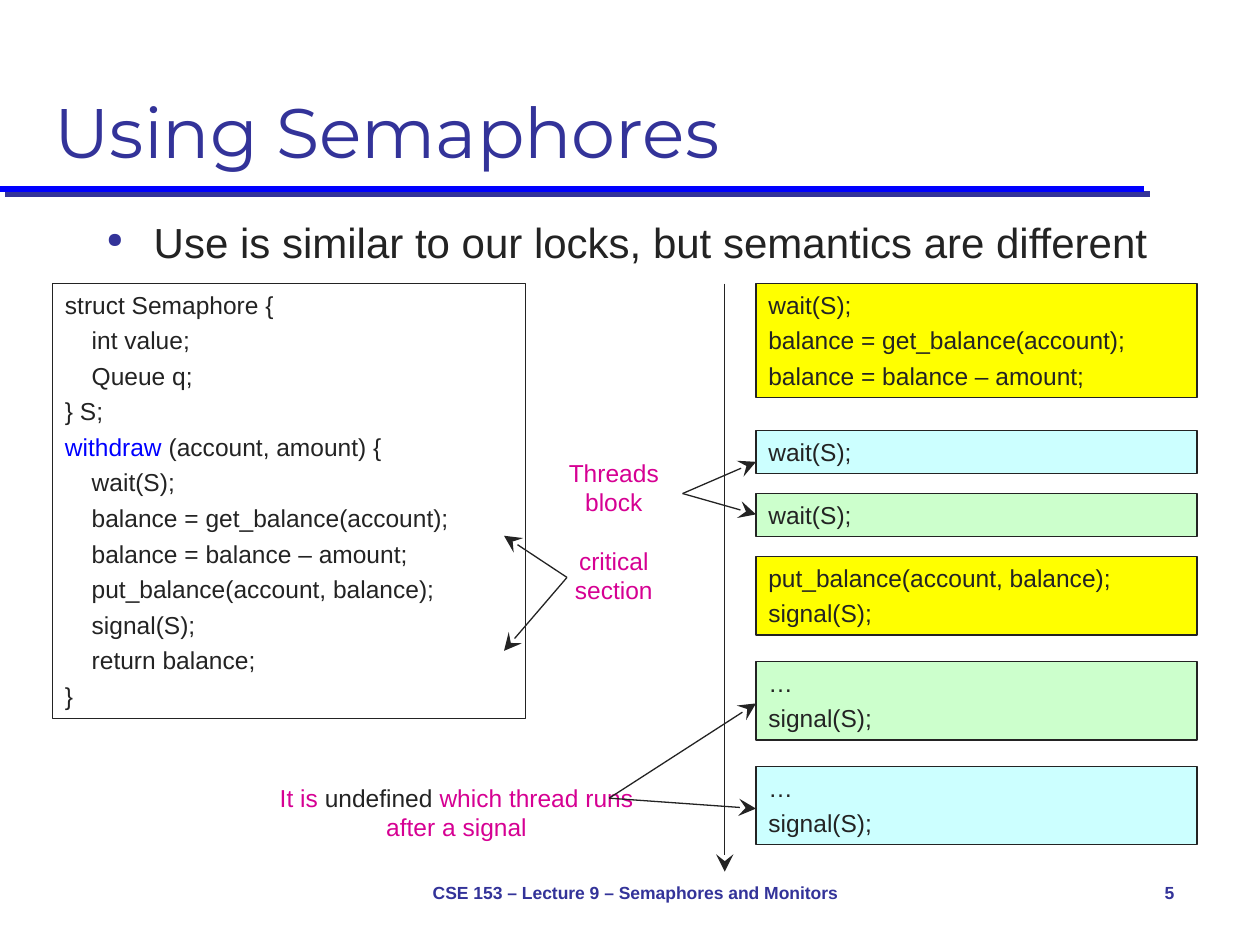
from lxml import etree
from pptx import Presentation
from pptx.dml.color import RGBColor
from pptx.enum.shapes import MSO_CONNECTOR, MSO_SHAPE
from pptx.enum.text import MSO_ANCHOR, PP_ALIGN
from pptx.oxml.ns import qn
from pptx.util import Cm, Pt

STRAIGHT, RECT = MSO_CONNECTOR.STRAIGHT, MSO_SHAPE.RECTANGLE
TOP, MIDDLE, BOTTOM = MSO_ANCHOR.TOP, MSO_ANCHOR.MIDDLE, MSO_ANCHOR.BOTTOM
LEFT, CENTER, RIGHT = PP_ALIGN.LEFT, PP_ALIGN.CENTER, PP_ALIGN.RIGHT

COLORS = {"ink": "232323", "navy": "333399", "blue": "0000FF", "pink": "D60093",
          "yellow": "FFFF00", "cyan": "CCFFFF", "green": "CCFFCC"}

# Content: a paragraph is (indent level, [(text, color), ...])
TITLE = "Using Semaphores"
POINT = "Use is similar to our locks, but semantics are different"
FOOTER = "CSE 153 – Lecture 9 – Semaphores and Monitors"
NUMBER = "5"


def code(*lines, level=0):
    return [(level, [(line, "ink")]) for line in lines]


PROGRAM = (
    code("struct Semaphore {")
    + code("int value;", "Queue q;", level=1)
    + code("} S;")
    + [(0, [("withdraw", "blue"), (" (account, amount) {", "ink")])]
    + code("wait(S);", "balance = get_balance(account);", "balance = balance – amount;",
           "put_balance(account, balance);", "signal(S);", "return balance;", level=1)
    + code("}")
)
# Thread steps: top, fill, lines
STEPS = [
    (5.72, "yellow", ["wait(S);", "balance = get_balance(account);",
                      "balance = balance – amount;"]),
    (8.68, "cyan", ["wait(S);"]),
    (9.95, "green", ["wait(S);"]),
    (11.22, "yellow", ["put_balance(account, balance);", "signal(S);"]),
    (13.34, "green", ["…", "signal(S);"]),
    (15.45, "cyan", ["…", "signal(S);"]),
]
# Labels: left, top, width, runs
LABELS = [
    (11, 9.1, 2.75, [("Threads block", "pink")]),
    (11, 10.88, 2.75, [("critical section", "pink")]),
    (5.29, 15.66, 7.83, [("It is ", "pink"), ("undefined", "ink"),
                         (" which thread runs after a signal", "pink")]),
]
# Arrows: start point, end points
ARROWS = [
    ((14.61, 5.72), [(14.61, 17.57)]),
    ((13.76, 9.95), [(15.24, 9.31), (15.24, 10.37)]),
    ((12.28, 16.09), [(15.24, 14.18), (15.24, 16.3)]),
    ((11.43, 11.64), [(10.16, 10.8), (10.16, 13.12)]),
]
STEP_LEFT, STEP_WIDTH = 15.24, 8.89
LINE_HEIGHT, LINE_PAD = 0.72, 0.14
INDENT = 0.54


def rgb(name):
    return RGBColor.from_string(COLORS[name])


def write(s, paragraphs, size=14, font="Arial", bold=False, align=LEFT,
          anchor=TOP, before=0):
    tf = s.text_frame
    tf.word_wrap = True
    tf.vertical_anchor = anchor
    for i, (level, runs) in enumerate(paragraphs):
        p = tf.add_paragraph() if i else tf.paragraphs[0]
        p.alignment = align
        p.space_before = Pt(before)
        if level:
            p._p.get_or_add_pPr().set("marL", str(Cm(INDENT * level)))
        for text, color in runs:
            r = p.add_run()
            r.text = text
            r.font.size, r.font.name, r.font.bold = Pt(size), font, bold
            r.font.color.rgb = rgb(color)
    return tf


def text_box(box, runs, **style):
    s = slide.shapes.add_textbox(*map(Cm, box))
    return write(s, [(0, runs)], **style)


def code_box(box, paragraphs, fill=None):
    s = slide.shapes.add_shape(RECT, *map(Cm, box))
    s.shadow.inherit = False
    if fill:
        s.fill.solid()
        s.fill.fore_color.rgb = rgb(fill)
    else:
        s.fill.background()
    s.line.color.rgb = rgb("ink")
    s.line.width = Pt(0.75)
    write(s, paragraphs, before=3.5)


def connect(start, end, color="ink", width=0.75):
    s = slide.shapes.add_connector(STRAIGHT, *map(Cm, start + end))
    s.line.color.rgb = rgb(color)
    s.line.width = Pt(width)
    effects = etree.SubElement(s._element.spPr, qn("a:effectLst"))
    return s, effects


prs = Presentation()
prs.slide_width, prs.slide_height = Cm(25.4), Cm(19.05)
slide = prs.slides.add_slide(prs.slide_layouts[6])

# Rule under the title, with its hard shadow
rule, effects = connect((0, 3.81), (23.07, 3.81), "blue", 3.5)
shadow = etree.SubElement(effects, qn("a:outerShdw"), dist=str(Pt(4.2)),
                          dir="2700000", algn="ctr", rotWithShape="0")
etree.SubElement(shadow, qn("a:srgbClr"), val=COLORS["navy"])

# Title, footer and slide number
text_box((0.85, 0.42, 23.71, 3.18), [(TITLE, "navy")], size=40,
         font="Montserrat", anchor=BOTTOM)
text_box((7.83, 17.36, 9.95, 1.27), [(FOOTER, "navy")], size=10, bold=True,
         align=CENTER, anchor=MIDDLE)
text_box((22.23, 17.36, 1.69, 1.27), [(NUMBER, "navy")], size=10, bold=True,
         align=RIGHT, anchor=MIDDLE)

# Bullet point
tf = text_box((1.9, 4.23, 22.02, 1.9), [(POINT, "ink")], size=24, before=5.5)
pPr = tf.paragraphs[0]._p.get_or_add_pPr()
pPr.set("marL", str(Cm(0.95)))
pPr.set("indent", str(-Cm(0.95)))
bullet_color = etree.SubElement(pPr, qn("a:buClr"))
etree.SubElement(bullet_color, qn("a:srgbClr"), val=COLORS["navy"])
etree.SubElement(pPr, qn("a:buSzPct"), val="50000")
etree.SubElement(pPr, qn("a:buChar"), char="●")

# Program and thread steps
code_box((1.06, 5.72, 9.53, 8.76), PROGRAM)
for top, fill, lines in STEPS:
    height = LINE_PAD + LINE_HEIGHT * len(lines)
    code_box((STEP_LEFT, top, STEP_WIDTH, height), code(*lines), fill)

# Labels
for left, top, width, runs in LABELS:
    text_box((left, top, width, 1.45), runs, align=CENTER, before=7)

# Timeline and pointers
for start, ends in ARROWS:
    for end in ends:
        s, effects = connect(start, end)
        etree.SubElement(s.line._get_or_add_ln(), qn("a:tailEnd"), type="stealth",
                         w="lg", len="lg")

prs.save("out.pptx")
